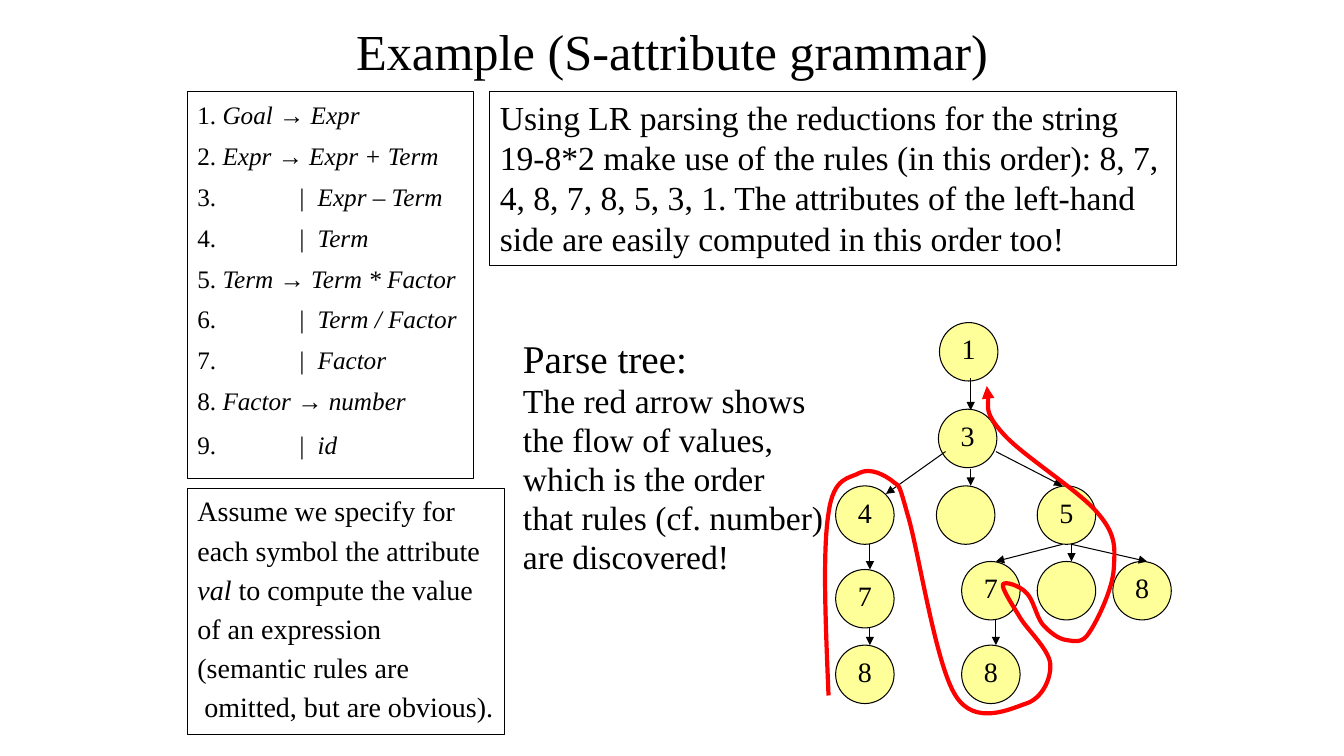
from lxml import etree
from pptx import Presentation
from pptx.dml.color import RGBColor
from pptx.enum import shapes, text
from pptx.oxml import ns
from pptx.util import Inches, Pt

BLACK = RGBColor(0x00, 0x00, 0x00)
RED = RGBColor(0xFF, 0x00, 0x00)
YELLOW = RGBColor(0xFF, 0xFF, 0x99)
FONT = "Times New Roman"
NODE_SIZE = 0.58

GRAMMAR = [
    "Goal → Expr", "Expr → Expr + Term", "|  Expr – Term", "|  Term",
    "Term → Term * Factor", "|  Term / Factor", "|  Factor",
    "Factor → number", "|  id",
]
ASSUMPTION = [
    "Assume we specify for", "each symbol the attribute",
    "val to compute the value", "of an expression",
    "(semantic rules are", " omitted, but are obvious).",
]
REDUCTIONS = (
    "Using LR parsing the reductions for the string 19-8*2 make use of the "
    "rules (in this order): 8, 7, 4, 8, 7, 8, 5, 3, 1. The attributes of the "
    "left-hand side are easily computed in this order too!"
)
TREE_NOTE = [
    "Parse tree:", "The red arrow shows", "the flow of values,",
    "which is the order", "that rules (cf. number)", "are discovered!",
]
NODES = [
    ("1", 9.32, 3.2), ("3", 9.31, 4.06),
    ("4", 8.29, 4.82), ("", 9.29, 4.82), ("5", 10.29, 4.82),
    ("7", 8.29, 5.65), ("7", 9.54, 5.57), ("", 10.29, 5.57), ("8", 11.04, 5.57),
    ("8", 8.29, 6.4), ("8", 9.54, 6.4),
]
EDGES = [
    (9.63, 3.75, 9.63, 4.07), (9.38, 4.48, 8.79, 4.9),
    (9.63, 4.65, 9.63, 4.82), (9.88, 4.48, 10.54, 4.82),
    (8.63, 5.4, 8.63, 5.65), (8.63, 6.23, 8.63, 6.4),
    (10.54, 5.4, 9.88, 5.57), (10.63, 5.4, 10.63, 5.57),
    (10.63, 5.4, 11.38, 5.57), (9.88, 6.15, 9.88, 6.4),
]
FLOW_START = (8.22, 6.9)
FLOW_CURVES = [
    ((8.19, 6.18), (8.16, 5.46), (8.22, 5.09)),
    ((8.27, 4.72), (8.43, 4.75), (8.53, 4.69)),
    ((8.64, 4.64), (8.77, 4.71), (8.85, 4.77)),
    ((8.92, 4.84), (8.9, 4.73), (9, 5.09)),
    ((9.11, 5.44), (9.28, 6.59), (9.48, 6.9)),
    ((9.67, 7.21), (10.03, 7.03), (10.18, 6.98)),
    ((10.34, 6.93), (10.43, 6.73), (10.42, 6.59)),
    ((10.41, 6.44), (10.18, 6.24), (10.11, 6.11)),
    ((10.03, 5.98), (9.94, 5.84), (9.95, 5.8)),
    ((9.96, 5.76), (10.12, 5.81), (10.18, 5.88)),
    ((10.25, 5.94), (10.28, 6.11), (10.34, 6.19)),
    ((10.41, 6.27), (10.5, 6.34), (10.58, 6.35)),
    ((10.66, 6.36), (10.74, 6.39), (10.81, 6.27)),
    ((10.89, 6.15), (11.04, 5.84), (11.05, 5.64)),
    ((11.06, 5.44), (11.08, 5.31), (10.89, 5.09)),
    ((10.71, 4.87), (10.13, 4.51), (9.95, 4.3)),
    ((9.76, 4.09), (9.82, 3.91), (9.79, 3.83)),
]


def add_text_box(slide, left, top, width, height, border=True):
    """Add a wrapping text box, framed in black if asked, and return its frame."""
    box = slide.shapes.add_textbox(
        Inches(left), Inches(top), Inches(width), Inches(height))
    box.text_frame.word_wrap = True
    if border:
        set_line(box, BLACK, 0.75)
    return box.text_frame


def set_line(shape, color, width):
    """Give a shape or connector a solid line."""
    shape.line.color.rgb = color
    shape.line.width = Pt(width)


def add_arrowhead(shape):
    """End the line of a shape or connector with a triangle."""
    etree.SubElement(shape.line._get_or_add_ln(), ns.qn("a:tailEnd"), type="triangle")


def add_paragraph(frame, size, runs, before=0.0, spacing=None):
    """Write (text, italic) runs in the next paragraph and return it."""
    first = frame.paragraphs[0]
    paragraph = frame.add_paragraph() if first.runs else first
    paragraph.font.name = FONT
    paragraph.font.size = Pt(size)
    paragraph.font.color.rgb = BLACK
    paragraph.space_before = Pt(before)
    paragraph.line_spacing = spacing
    for content, italic in runs:
        run = paragraph.add_run()
        run.text = content
        if italic:
            run.font.italic = True
    return paragraph


def add_tab_stop(paragraph, position):
    """Set one left tab stop in a paragraph."""
    stops = etree.Element(ns.qn("a:tabLst"))
    etree.SubElement(stops, ns.qn("a:tab"), pos=str(Inches(position)), algn="l")
    paragraph._p.pPr.find(ns.qn("a:defRPr")).addprevious(stops)


def add_grammar(slide):
    """List the numbered productions, alternatives aligned by a tab."""
    frame = add_text_box(slide, 1.86, 0.91, 2.84, 3.84)
    for number, rule in enumerate(GRAMMAR, 1):
        gap = "\t" if rule.startswith("|") else " "
        runs = [(f"{number}.", False), (gap, False), (rule, True)]
        paragraph = add_paragraph(frame, 18, runs, 2.7, 1.1)
        paragraph.space_after = Pt(2.7)
        add_tab_stop(paragraph, 1)
    paragraph.runs[1].font.size = Pt(20)


def add_assumption(slide):
    """State the assumption, with the attribute name in italics."""
    frame = add_text_box(slide, 1.86, 4.85, 3.15, 2.44)
    for index, content in enumerate(ASSUMPTION):
        name, attribute, rest = content.partition("val ")
        runs = [(attribute.strip(), True), (" " + rest, False)] if attribute else [(name, False)]
        add_paragraph(frame, 20, runs, 4 if index else 0)


def add_tree_note(slide):
    """Explain the parse tree under a larger heading."""
    frame = add_text_box(slide, 5.09, 3.36, 3.3, 2.5, border=False)
    for index, content in enumerate(TREE_NOTE):
        add_paragraph(frame, 24 if index else 28, [(content, False)],
                      4.8 if index else 0, 0.8)


def add_node(slide, label, left, top):
    """Add a yellow tree node with its rule number."""
    node = slide.shapes.add_shape(
        shapes.MSO_SHAPE.OVAL, Inches(left), Inches(top),
        Inches(NODE_SIZE), Inches(NODE_SIZE))
    node.shadow.inherit = False
    node.fill.solid()
    node.fill.fore_color.rgb = YELLOW
    set_line(node, BLACK, 0.75)
    if label:
        node.text_frame.vertical_anchor = text.MSO_ANCHOR.MIDDLE
        paragraph = add_paragraph(node.text_frame, 20, [(label, False)], spacing=0.8)
        paragraph.alignment = text.PP_ALIGN.CENTER


def add_edge(slide, *ends):
    """Add a thin black arrow between two tree nodes."""
    edge = slide.shapes.add_connector(
        shapes.MSO_CONNECTOR.STRAIGHT, *(Inches(value) for value in ends))
    set_line(edge, BLACK, 0.75)
    add_arrowhead(edge)
    etree.SubElement(edge._element.spPr, ns.qn("a:effectLst"))


def bend_segments(shape):
    """Turn each three straight segments of a freeform into one cubic curve."""
    segments = list(shape._element.iter(ns.qn("a:lnTo")))
    for index in range(0, len(segments), 3):
        curve = etree.Element(ns.qn("a:cubicBezTo"))
        segments[index].addprevious(curve)
        for segment in segments[index:index + 3]:
            curve.append(segment[0])
            segment.getparent().remove(segment)


def add_flow_arrow(slide):
    """Draw the red arrow that follows the flow of values."""
    builder = slide.shapes.build_freeform(*(Inches(value) for value in FLOW_START))
    controls = [(Inches(x), Inches(y)) for curve in FLOW_CURVES for x, y in curve]
    builder.add_line_segments(controls, close=False)
    arrow = builder.convert_to_shape()
    bend_segments(arrow)
    arrow.shadow.inherit = False
    arrow.fill.background()
    set_line(arrow, RED, 3)
    add_arrowhead(arrow)


def main():
    """Build the slide and save it."""
    presentation = Presentation()
    presentation.slide_width = Inches(40 / 3)
    presentation.slide_height = Inches(7.5)
    slide = presentation.slides.add_slide(presentation.slide_layouts[6])

    title = add_text_box(slide, 1.67, 0, 10, 0.99, border=False)
    title.vertical_anchor = text.MSO_ANCHOR.MIDDLE
    heading = add_paragraph(title, 36, [("Example (S-attribute grammar)", False)])
    heading.alignment = text.PP_ALIGN.CENTER

    add_assumption(slide)
    add_grammar(slide)
    add_paragraph(add_text_box(slide, 4.86, 0.91, 6.81, 1.72), 24, [(REDUCTIONS, False)])
    for node in NODES:
        add_node(slide, *node)
    for edge in EDGES:
        add_edge(slide, *edge)
    add_flow_arrow(slide)
    add_tree_note(slide)
    presentation.save("out.pptx")


if __name__ == "__main__":
    main()
